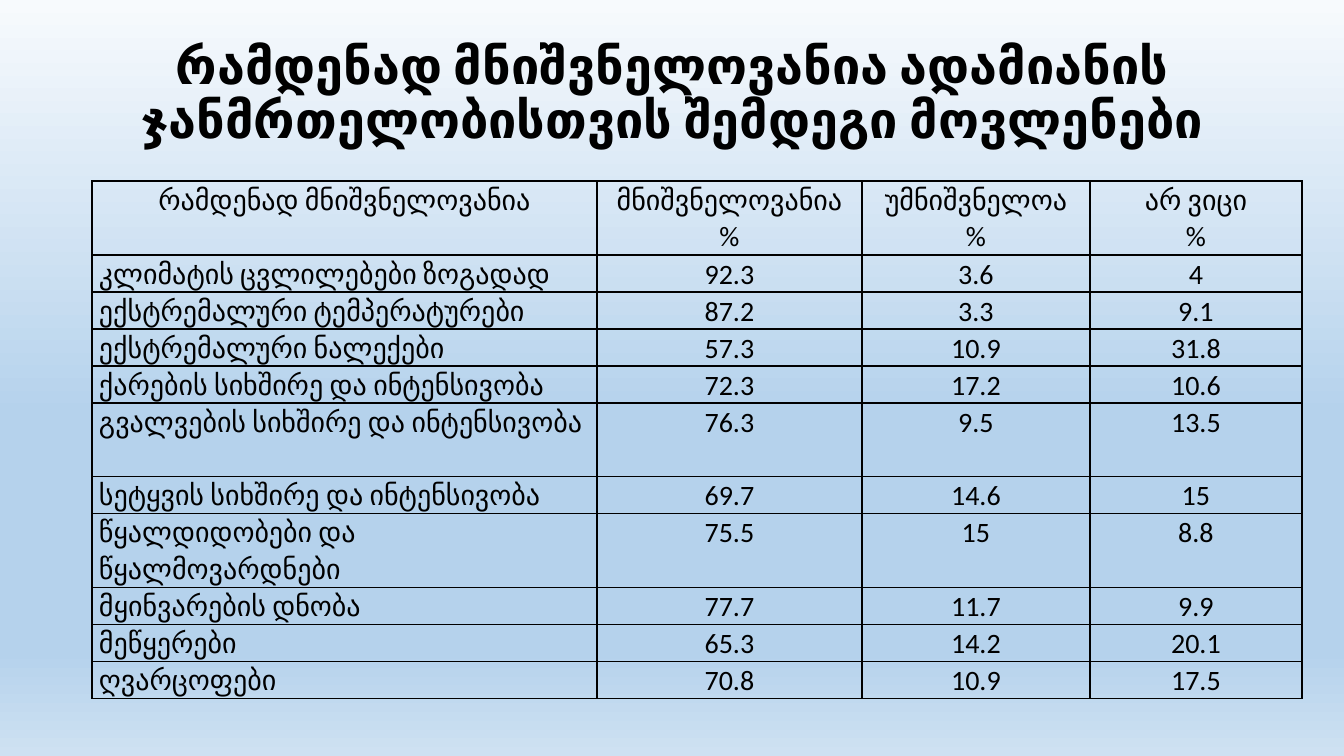
from lxml.etree import SubElement
from pptx import Presentation
from pptx.dml.color import RGBColor
from pptx.enum.text import MSO_ANCHOR, PP_ALIGN
from pptx.oxml.ns import qn
from pptx.util import Emu, Pt

THEME = {
    "font": "Calibri",
    "ink": "000000",
    "title_size": 36,
    "table_size": 20,
    "border_width": 1,
    "background": [(0, "F7FAFD"), (55, "B5D2EC"), (86, "B5D2EC"), (100, "CEE1F2")],
}
SLIDE_SIZE = 1344, 756
TITLE_BOX = 93, 22, 1159, 146
TABLE_LEFT, TABLE_TOP = 92, 181
COLUMN_WIDTHS = 505, 265, 228, 212
LINE_HEIGHT, DOUBLE_HEIGHT = 37, 74
DOUBLE_ROWS = 0, 5, 7

TITLE = "რამდენად მნიშვნელოვანია ადამიანის ჯანმრთელობისთვის შემდეგი მოვლენები"
ROWS = [
    ("რამდენად მნიშვნელოვანია", "მნიშვნელოვანია\n%", "უმნიშვნელოა\n%", "არ ვიცი\n%"),
    ("კლიმატის ცვლილებები ზოგადად", "92.3", "3.6", "4"),
    ("ექსტრემალური ტემპერატურები", "87.2", "3.3", "9.1"),
    ("ექსტრემალური ნალექები", "57.3", "10.9", "31.8"),
    ("ქარების სიხშირე და ინტენსივობა", "72.3", "17.2", "10.6"),
    ("გვალვების სიხშირე და ინტენსივობა", "76.3", "9.5", "13.5"),
    ("სეტყვის სიხშირე და ინტენსივობა", "69.7", "14.6", "15"),
    ("წყალდიდობები და წყალმოვარდნები", "75.5", "15", "8.8"),
    ("მყინვარების დნობა", "77.7", "11.7", "9.9"),
    ("მეწყერები", "65.3", "14.2", "20.1"),
    ("ღვარცოფები", "70.8", "10.9", "17.5"),
]


def px(length):
    return Emu(round(length * 12192000 / 1344))


def write(frame, text, size, align, spacing, bold=False):
    """Fill a text frame, one paragraph per line of text."""
    frame.text = text
    frame.word_wrap = True
    for paragraph in frame.paragraphs:
        paragraph.alignment = align
        paragraph.line_spacing = spacing
        font = paragraph.runs[0].font
        for name, value in {"name": THEME["font"], "size": Pt(size), "bold": bold}.items():
            setattr(font, name, value)
        font.color.rgb = RGBColor.from_string(THEME["ink"])


deck = Presentation()
deck.slide_width, deck.slide_height = map(px, SLIDE_SIZE)
slide = deck.slides.add_slide(deck.slide_layouts[6])

# Background gradient, top to bottom
backdrop = slide.background.fill
backdrop.gradient()
gradient = slide.background._cSld.find(".//" + qn("a:gradFill"))
for child in list(gradient):
    gradient.remove(child)
stops = SubElement(gradient, qn("a:gsLst"))
for percent, color in THEME["background"]:
    stop = SubElement(stops, qn("a:gs"), pos=str(percent * 1000))
    SubElement(stop, qn("a:srgbClr"), val=color)
SubElement(gradient, qn("a:lin"), ang="5400000", scaled="0")

# Title
title = slide.shapes.add_textbox(*map(px, TITLE_BOX)).text_frame
write(title, TITLE, THEME["title_size"], PP_ALIGN.CENTER, 0.9, bold=True)
title.vertical_anchor = MSO_ANCHOR.MIDDLE

# Survey table
row_heights = [DOUBLE_HEIGHT if r in DOUBLE_ROWS else LINE_HEIGHT for r in range(len(ROWS))]
survey = slide.shapes.add_table(
    len(ROWS), len(COLUMN_WIDTHS), px(TABLE_LEFT), px(TABLE_TOP),
    px(sum(COLUMN_WIDTHS)), px(sum(row_heights)),
).table
survey.first_row = survey.horz_banding = False
for column, width in zip(survey.columns, COLUMN_WIDTHS):
    column.width = px(width)
for row, height in zip(survey.rows, row_heights):
    row.height = px(height)

cell_format = {
    "margin_left": px(7), "margin_right": px(7), "margin_top": 0, "margin_bottom": 0,
    "vertical_anchor": MSO_ANCHOR.TOP,
}
for r, answers in enumerate(ROWS):
    for c, answer in enumerate(answers):
        cell = survey.cell(r, c)
        is_event = r > 0 and c == 0
        align = PP_ALIGN.LEFT if is_event else PP_ALIGN.CENTER
        write(cell.text_frame, answer, THEME["table_size"], align, 1.07)
        for name, value in cell_format.items():
            setattr(cell, name, value)
        properties = cell._tc.get_or_add_tcPr()
        for side in ("a:lnL", "a:lnR", "a:lnT", "a:lnB"):
            border = SubElement(properties, qn(side), w=str(Pt(THEME["border_width"])))
            ink = SubElement(border, qn("a:solidFill"))
            SubElement(ink, qn("a:srgbClr"), val=THEME["ink"])
        cell.fill.background()

deck.save("out.pptx")
